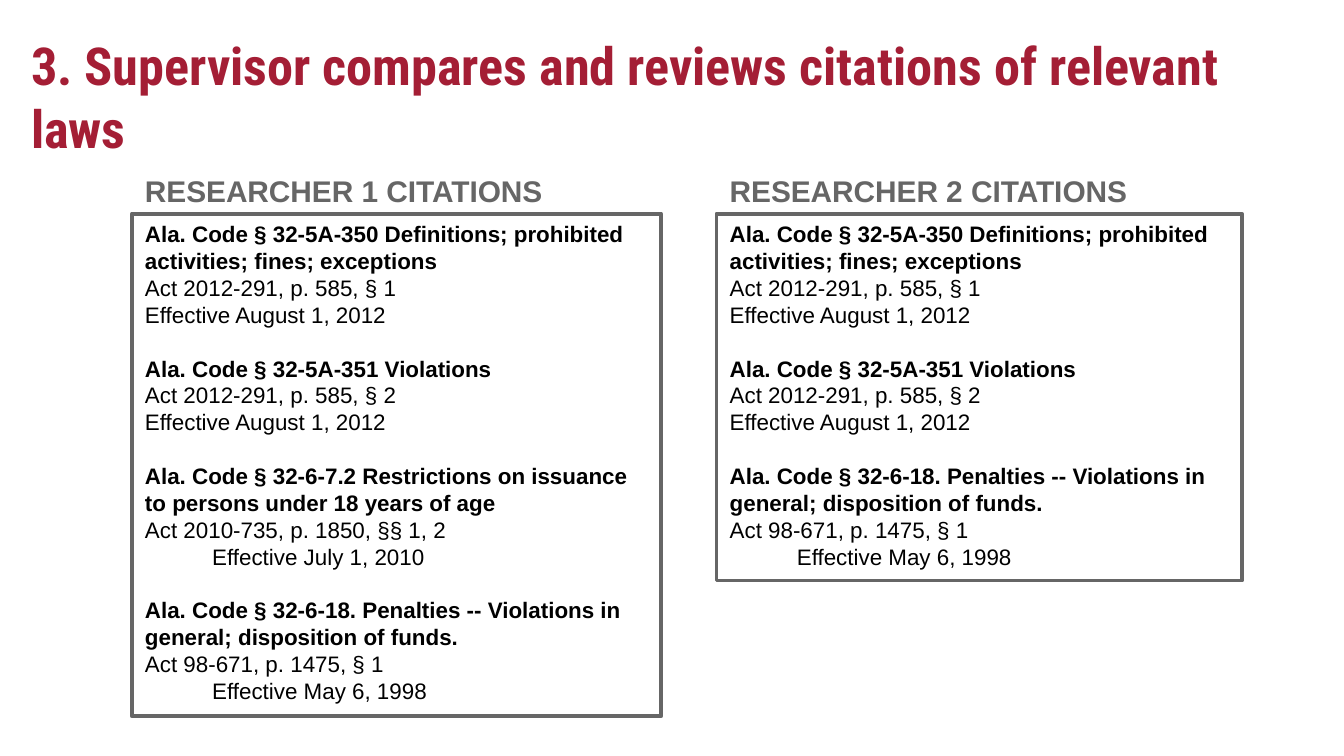
"""Build a slide that compares the legal citations found by two researchers."""
from dataclasses import dataclass

from pptx import Presentation
from pptx.dml.color import RGBColor
from pptx.enum.shapes import MSO_SHAPE
from pptx.enum.text import MSO_ANCHOR, MSO_AUTO_SIZE, PP_ALIGN
from pptx.util import Pt

RECTANGLE = MSO_SHAPE.RECTANGLE
TOP, MIDDLE = MSO_ANCHOR.TOP, MSO_ANCHOR.MIDDLE
LEFT = PP_ALIGN.LEFT
NO_FIT, GROW = MSO_AUTO_SIZE.NONE, MSO_AUTO_SIZE.SHAPE_TO_FIT_TEXT

TITLE = "3. Supervisor compares and reviews citations of relevant laws"

DEFINITIONS = {
    "law": "Ala. Code § 32-5A-350 Definitions; prohibited activities; fines; exceptions",
    "act": "Act 2012-291, p. 585, § 1",
    "effective": "Effective August 1, 2012",
    "indented": False,
}
VIOLATIONS = {
    "law": "Ala. Code § 32-5A-351 Violations",
    "act": "Act 2012-291, p. 585, § 2",
    "effective": "Effective August 1, 2012",
    "indented": False,
}
RESTRICTIONS = {
    "law": "Ala. Code § 32-6-7.2 Restrictions on issuance to persons under 18 years of age",
    "act": "Act 2010-735, p. 1850, §§ 1, 2",
    "effective": "Effective July 1, 2010",
    "indented": True,
}
PENALTIES = {
    "law": "Ala. Code § 32-6-18. Penalties -- Violations in general; disposition of funds.",
    "act": "Act 98-671, p. 1475, § 1",
    "effective": "Effective May 6, 1998",
    "indented": True,
}

RESEARCHERS = [
    {
        "heading": "RESEARCHER 1 CITATIONS",
        "citations": [DEFINITIONS, VIOLATIONS, RESTRICTIONS, PENALTIES],
        "left": 70.6, "width": 283.7, "height": 269.3,
    },
    {
        "heading": "RESEARCHER 2 CITATIONS",
        "citations": [DEFINITIONS, VIOLATIONS, PENALTIES],
        "left": 383.8, "width": 281.5, "height": 196.6,
    },
]


@dataclass(frozen=True)
class Theme:
    title_font: str = "Roboto Condensed"
    body_font: str = "Arial"
    title_size: int = 28
    heading_size: int = 16
    citation_size: int = 12
    crimson: RGBColor = RGBColor(0xA4, 0x1E, 0x35)
    gray: RGBColor = RGBColor(0x66, 0x66, 0x66)
    black: RGBColor = RGBColor(0, 0, 0)


THEME = Theme()
HEADING_TOP, HEADING_HEIGHT = 90, 23.8
BOX_TOP = 114.5
LINE_SPACING = 1.0
CITATION_GAP = 14.4
DATE_INDENT = 36


def add_text(paragraph, text, font, size, color, bold):
    paragraph.alignment = LEFT
    run = paragraph.add_run()
    run.text = text
    run.font.name = font
    run.font.size = Pt(size)
    run.font.color.rgb = color
    run.font.bold = bold


def add_title(slide):
    title = slide.shapes.title
    title.left, title.top, title.width, title.height = Pt(9.4), Pt(10.8), Pt(660), Pt(45.4)
    frame = title.text_frame
    frame.word_wrap = True
    frame.auto_size = NO_FIT
    frame.vertical_anchor = TOP
    frame.margin_left = frame.margin_right = Pt(7.2)
    frame.margin_top = frame.margin_bottom = Pt(7.2)
    add_text(frame.paragraphs[0], TITLE, THEME.title_font, THEME.title_size, THEME.crimson, True)


def add_heading(slide, researcher):
    heading = slide.shapes.add_textbox(
        Pt(researcher["left"]), Pt(HEADING_TOP), Pt(researcher["width"]), Pt(HEADING_HEIGHT))
    frame = heading.text_frame
    frame.word_wrap = True
    frame.vertical_anchor = MIDDLE
    add_text(frame.paragraphs[0], researcher["heading"],
             THEME.body_font, THEME.heading_size, THEME.gray, True)


def add_citations(slide, researcher):
    box = slide.shapes.add_shape(
        RECTANGLE, Pt(researcher["left"]), Pt(BOX_TOP),
        Pt(researcher["width"]), Pt(researcher["height"]))
    box.shadow.inherit = False
    box.fill.background()
    box.line.color.rgb = THEME.gray
    box.line.width = Pt(2)
    frame = box.text_frame
    frame.word_wrap = True
    frame.auto_size = GROW
    frame.vertical_anchor = TOP
    for number, citation in enumerate(researcher["citations"]):
        for part in ("law", "act", "effective"):
            starts_box = number == 0 and part == "law"
            paragraph = frame.paragraphs[0] if starts_box else frame.add_paragraph()
            paragraph.line_spacing = LINE_SPACING
            if part == "law" and not starts_box:
                paragraph.space_before = Pt(CITATION_GAP)
            if part == "effective" and citation["indented"]:
                paragraph._p.get_or_add_pPr().set("marL", str(Pt(DATE_INDENT)))
            add_text(paragraph, citation[part], THEME.body_font,
                     THEME.citation_size, THEME.black, part == "law")


def main():
    presentation = Presentation()
    presentation.slide_width, presentation.slide_height = Pt(720), Pt(405)
    slide = presentation.slides.add_slide(presentation.slide_layouts.get_by_name("Title Only"))
    add_title(slide)
    for researcher in RESEARCHERS:
        add_citations(slide, researcher)
        add_heading(slide, researcher)
    presentation.save("out.pptx")


if __name__ == "__main__":
    main()
